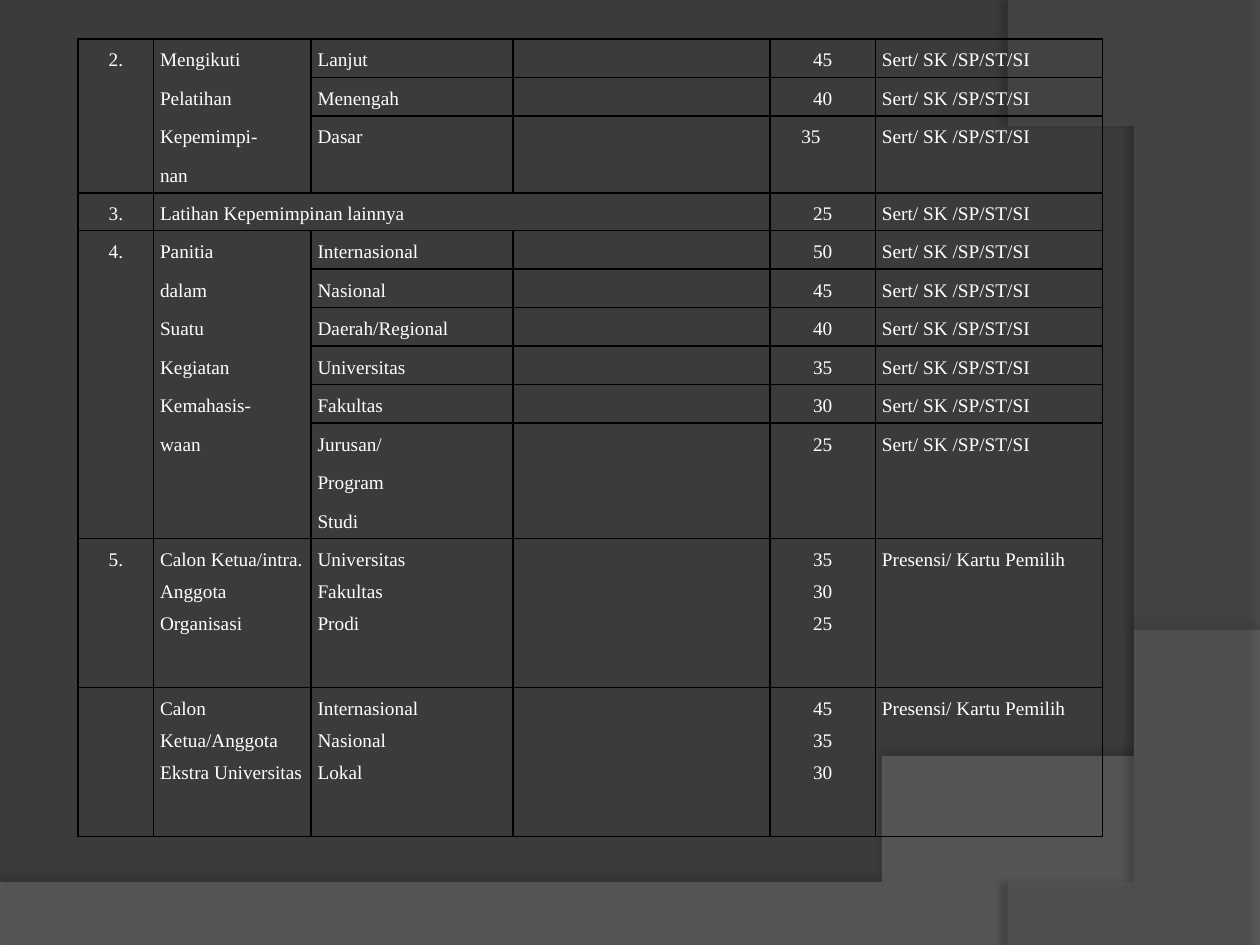
from lxml import etree
from pptx import Presentation
from pptx import util as u
from pptx.dml.color import RGBColor
from pptx.enum import text
from pptx.oxml import ns

BACKGROUND = RGBColor(0x3B, 0x3B, 0x3B)
WAVE = RGBColor(0x7F, 0x7F, 0x7F)
ARC = RGBColor(0x5E, 0x5E, 0x5E)
BLACK = RGBColor(0, 0, 0)
WHITE = RGBColor(0xFF, 0xFF, 0xFF)
FONT = "Times New Roman"


def add_element(parent, tag, **attributes):
    values = {name: str(value) for name, value in attributes.items()}
    return etree.SubElement(parent, ns.qn(tag), values)


def write(para, words, size=11, color=WHITE, align=text.PP_ALIGN.LEFT, indent=0):
    para.alignment = align
    para.line_spacing = 1.5
    if indent:
        para._p.get_or_add_pPr().set("marL", str(u.Inches(indent)))
    if not words:
        add_element(para._p, "a:endParaRPr", sz=size * 100)
        return
    span = para.add_run()
    span.text = words
    span.font.name = FONT
    span.font.size = u.Pt(size)
    span.font.color.rgb = color


deck = Presentation()
deck.slide_width, deck.slide_height = u.Inches(10), u.Inches(7.5)
page = deck.slides.add_slide(deck.slide_layouts[6])
page.background.fill.solid()
page.background.fill.fore_color.rgb = BACKGROUND

bands = [
    ([(0, 7.05), (0, 7.51), (10, 7.51)],
     [(10, 5.2), (5.59, 7.29), (3.91, 7.19), (0, 7.05)], WAVE, 45, 35, 3.5, 270),
    ([(10, 0.02), (10, 7.5)],
     [(8.21, 7.5), (9.35, 6.19), (10.18, 3), (8, 0)], ARC, 40, 45, 4, 180),
]
STEPS = 60
for corners, curve, color, opacity, shade, distance, angle in bands:
    points = list(corners)
    for step in range(STEPS + 1):
        t = step / STEPS
        weights = [(1 - t) ** 3, 3 * t * (1 - t) ** 2, 3 * t * t * (1 - t), t ** 3]
        points.append(tuple(sum(w * p[axis] for w, p in zip(weights, curve))
                            for axis in (0, 1)))
    outline = page.shapes.build_freeform(*points[0], scale=u.Inches(1))
    outline.add_line_segments(points[1:], close=True)
    band = outline.convert_to_shape()
    band.fill.solid()
    band.fill.fore_color.rgb = color
    band.line.fill.background()
    band.shadow.inherit = False
    properties = band._element.spPr
    fill_color = properties.find(ns.qn("a:solidFill"))[0]
    add_element(fill_color, "a:alpha", val=opacity * 1000)
    shadow = add_element(properties.find(ns.qn("a:effectLst")), "a:outerShdw",
                         blurRad=u.Pt(4), dist=u.Pt(distance), dir=angle * 60000,
                         algn="ctr", rotWithShape=0)
    shadow_color = add_element(shadow, "a:srgbClr", val=BLACK)
    add_element(shadow_color, "a:alpha", val=shade * 1000)

PROOF = "Sert/ SK /SP/ST/SI"
BALLOT = "Presensi/ Kartu Pemilih"
rows = [
    ("2.", "Mengikuti", "Lanjut", "", "45", PROOF),
    ("", "Pelatihan", "Menengah", "", "40", PROOF),
    ("", "Kepemimpi-", "Dasar", "", "35", PROOF),
    ("", "nan", "", "", "", ""),
    ("3.", "Latihan Kepemimpinan lainnya", "", "", "25", PROOF),
    ("4.", "Panitia", "Internasional", "", "50", PROOF),
    ("", "dalam", "Nasional", "", "45", PROOF),
    ("", "Suatu", "Daerah/Regional", "", "40", PROOF),
    ("", "Kegiatan", "Universitas", "", "35", PROOF),
    ("", "Kemahasis-", "Fakultas", "", "30", PROOF),
    ("", "waan", "Jurusan/", "", "25", PROOF),
    ("", "", "Program", "", "", ""),
    ("", "", "Studi", "", "", ""),
    ("5.", "Calon Ketua/intra. Anggota Organisasi",
     "Universitas\nFakultas\nProdi", "", "35\n30\n25", BALLOT),
    ("", "Calon Ketua/Anggota Ekstra Universitas",
     "Internasional\nNasional\nLokal", "", "45\n35\n30", BALLOT),
]
widths = [0.6, 1.25, 1.6, 2.04, 0.84, 1.8]
heights = [22] * 4 + [21.5] + [22] * 8 + [85.2] * 2
group_starts = {0, 4, 5, 13, 14, 15}
continued_rows = {3, 11, 12}
LATE_SCORE = (2, 4)

frame = page.shapes.add_table(len(rows), len(widths), u.Inches(0.62), u.Inches(0.31),
                              u.Inches(sum(widths)), u.Pt(sum(heights)))
table = frame.table
table.first_row = table.horz_banding = False
style = table._tbl.tblPr.find(ns.qn("a:tableStyleId"))
style.text = "{2D5ABB26-0587-4C30-8999-92F81FD0307C}"
for column, width in zip(table.columns, widths):
    column.width = u.Inches(width)
for row, height in zip(table.rows, heights):
    row.height = u.Pt(height)
table.cell(4, 1).merge(table.cell(4, 3))

for r, entries in enumerate(rows):
    for c, entry in enumerate(entries):
        cell = table.cell(r, c)
        if cell.is_spanned:
            continue
        cell.margin_left = cell.margin_right = u.Inches(0.05)
        cell.margin_top = cell.margin_bottom = 0
        centered = c in (0, 4) and (r, c) != LATE_SCORE
        for index, line in enumerate(entry.split("\n")):
            para = cell.text_frame.add_paragraph() if index else cell.text_frame.paragraphs[0]
            write(para, line,
                  align=text.PP_ALIGN.CENTER if centered else text.PP_ALIGN.LEFT,
                  indent=0.2 if (r, c) == LATE_SCORE else 0)
        top, bottom = [edge in group_starts if c < 2 else edge not in continued_rows
                       for edge in (r, r + 1)]
        cell_properties = cell._tc.get_or_add_tcPr()
        for side, visible in zip("LRTB", (True, True, top, bottom)):
            border = add_element(cell_properties, f"a:ln{side}", w=u.Pt(1))
            if visible:
                add_element(add_element(border, "a:solidFill"), "a:srgbClr", val=BLACK)
            else:
                add_element(border, "a:noFill")
        cell.fill.background()

deck.save("out.pptx")
